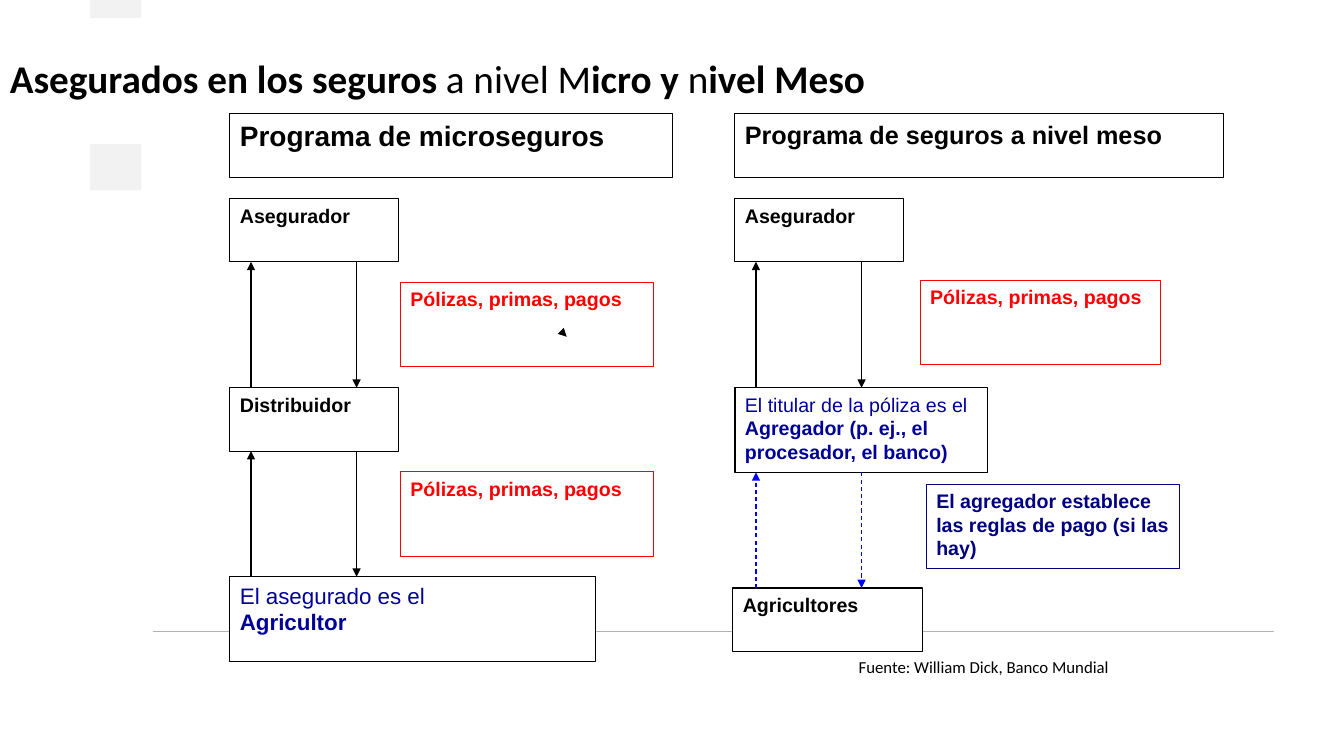
"""Build the slide comparing micro-level and meso-level insurance schemes."""
from dataclasses import dataclass

from lxml.etree import SubElement
from pptx import Presentation
from pptx.dml.color import RGBColor
from pptx.enum.dml import MSO_LINE
from pptx.enum.shapes import MSO_CONNECTOR, MSO_SHAPE
from pptx.enum.text import MSO_ANCHOR
from pptx.oxml.ns import qn
from pptx.util import Pt


@dataclass(frozen=True)
class Theme:
    white: str = "FFFFFF"
    black: str = "000000"
    red: str = "FF0000"
    ink: str = "000099"
    navy: str = "000080"
    blue: str = "0000FF"
    band: str = "F2F2F2"
    rule: str = "B2B2B2"
    head_font: str = "Calibri"
    body_font: str = "Arial"
    title: int = 28
    micro: int = 20
    meso: int = 18
    insured: int = 16
    body: int = 14
    source: int = 12
    stroke: float = 0.75


T = Theme()


def add_box(s, at, paragraphs, size, color, font=T.body_font, edge=None, fill=T.white):
    sp = s.shapes.add_textbox(*map(Pt, at))
    if fill:
        sp.fill.solid()
        sp.fill.fore_color.rgb = RGBColor.from_string(fill)
    if edge:
        sp.line.color.rgb = RGBColor.from_string(edge)
        sp.line.width = Pt(T.stroke)
    tf = sp.text_frame
    tf.word_wrap = True
    for i, runs in enumerate(paragraphs):
        p = tf.add_paragraph() if i else tf.paragraphs[0]
        for text, bold in runs:
            r = p.add_run()
            r.text = text
            r.font.name = font
            r.font.size = Pt(size)
            r.font.bold = bold
            r.font.color.rgb = RGBColor.from_string(color)
    return tf


def add_line(s, start, end, color, width=T.stroke, arrow=True, dashed=False):
    cx = s.shapes.add_connector(MSO_CONNECTOR.STRAIGHT, *map(Pt, start + end))
    cx.line.color.rgb = RGBColor.from_string(color)
    cx.line.width = Pt(width)
    if dashed:
        cx.line.dash_style = MSO_LINE.DASH
    if arrow:
        SubElement(cx.line._get_or_add_ln(), qn("a:tailEnd"), type="triangle")
    SubElement(cx._element.spPr, qn("a:effectLst"))


prs = Presentation()
prs.slide_width, prs.slide_height = Pt(960), Pt(540)
s = prs.slides.add_slide(prs.slide_layouts[6])

band = s.shapes.add_shape(MSO_SHAPE.RECTANGLE, Pt(64.3), Pt(0), Pt(36.7), Pt(136))
band.shadow.inherit = False
band.fill.solid()
band.fill.fore_color.rgb = RGBColor.from_string(T.band)
band.line.fill.background()
add_line(s, (109, 451), (910, 451), T.rule, 0.5, arrow=False)

title = [("Asegurados en los seguros ", True), ("a nivel M", False), ("icro y ", True),
         ("n", False), ("ivel Meso", True)]
tf = add_box(s, (0, 13, 653, 90), [title], T.title, T.black, T.head_font)
tf.vertical_anchor = MSO_ANCHOR.MIDDLE
tf.paragraphs[0].line_spacing = 0.9

micro_x, meso_x = 164.3, 525
head_y, insurer_y, middle_y, farmer_y, meso_farmer_y = 81.4, 141.8, 277, 412, 420
low, tall = 45.2, 60.4
flow = "Pólizas, primas, pagos"

bold_boxes = [
    ((micro_x, head_y, 316, low), "Programa de microseguros", T.micro, T.black),
    ((meso_x, head_y, 349, low), "Programa de seguros a nivel meso", T.meso, T.black),
    ((micro_x, insurer_y, 120.3, low), "Asegurador", T.body, T.black),
    ((meso_x, insurer_y, 120.3, low), "Asegurador", T.body, T.black),
    ((micro_x, middle_y, 120.3, low), "Distribuidor", T.body, T.black),
    ((523.5, meso_farmer_y, 135.4, low), "Agricultores", T.body, T.black),
    ((286, 201.6, 180.6, tall), flow, T.body, T.red),
    ((286, 337, 180.6, tall), flow, T.body, T.red),
    ((657.3, 200.2, 172, tall), flow, T.body, T.red),
    ((661.7, 345.8, 180.6, tall), "El agregador establece las reglas de pago (si las hay)",
     T.body, T.navy),
]
for at, text, size, color in bold_boxes:
    add_box(s, at, [[(text, True)]], size, color, edge=color)

add_box(s, (micro_x, farmer_y, 261, tall),
        [[("El asegurado es el", False)], [("Agricultor", True)]],
        T.insured, T.ink, edge=T.black)
add_box(s, (meso_x, middle_y, 180.6, tall),
        [[("El titular de la póliza es el ", False),
          ("Agregador (p. ej., el procesador, el banco)", True)]],
        T.body, T.ink, edge=T.black)

links = [
    (micro_x, insurer_y + low, middle_y, T.black, False),
    (micro_x, middle_y + low, farmer_y, T.black, False),
    (meso_x, insurer_y + low, middle_y, T.black, False),
    (meso_x, middle_y + tall, meso_farmer_y, T.blue, True),
]
for x, top, bottom, color, dashed in links:
    up, down = x + 15, x + 90.4
    add_line(s, (up, bottom), (up, top), color, dashed=dashed)
    add_line(s, (down, top), (down, bottom), color, dashed=dashed)
add_line(s, (404.4, 240.2), (404.8, 240.6), T.black)

add_box(s, (606.2, 465.3, 294.5, 21.8), [[("Fuente: William Dick, Banco Mundial", False)]],
        T.source, T.black, T.head_font, fill=None)

prs.save("out.pptx")
